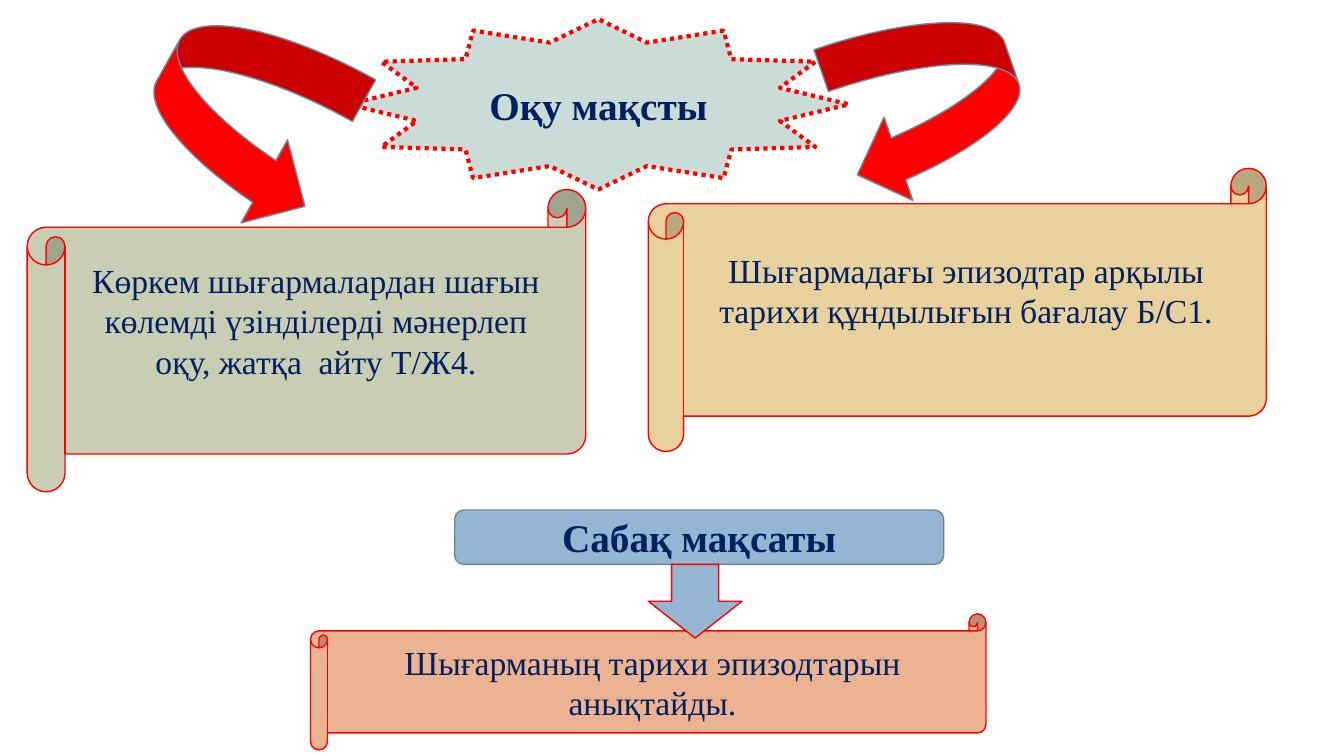
"""Build a slide that sets out reading aims and the lesson aim."""
import pptx
import pptx.util
import pptx.dml.color
import pptx.enum.dml
import pptx.enum.shapes
import pptx.enum.text

Inches = pptx.util.Inches
Pt = pptx.util.Pt
RGBColor = pptx.dml.color.RGBColor
Kind = pptx.enum.shapes.MSO_SHAPE

NAVY = RGBColor(0x00, 0x20, 0x60)
RED = RGBColor(0xFF, 0x00, 0x00)
SLATE = RGBColor(0x6D, 0x87, 0x9B)
BLUE = RGBColor(0x94, 0xB6, 0xD2)
MINT = RGBColor(0xCA, 0xDC, 0xD8)
SAGE = RGBColor(0xC9, 0xCD, 0xB3)
SAND = RGBColor(0xE8, 0xD1, 0x9D)
PEACH = RGBColor(0xEB, 0xB3, 0x91)


class Board:
    """Hold the text style and the current slide."""

    font = "Times New Roman"
    ink = NAVY

    def __init__(self, slide):
        self.slide = slide

    def shape(self, kind, box, fill, line=RED, turn=0):
        """Draw a filled preset shape with a thin outline."""
        item = self.slide.shapes.add_shape(kind, *[Inches(n) for n in box])
        item.shadow.inherit = False
        item.fill.solid()
        item.fill.fore_color.rgb = fill
        item.line.color.rgb = line
        item.line.width = Pt(1)
        item.rotation = turn
        return item

    def label(self, item, text, size, bold=False):
        """Put centred text in a shape."""
        frame = item.text_frame
        frame.word_wrap = True
        frame.vertical_anchor = pptx.enum.text.MSO_ANCHOR.MIDDLE
        para = frame.paragraphs[0]
        para.alignment = pptx.enum.text.PP_ALIGN.CENTER
        run = para.add_run()
        run.text = text
        run.font.name = self.font
        run.font.size = Pt(size)
        run.font.bold = bold
        run.font.color.rgb = self.ink

    def scroll(self, box, fill, text, foot=0.05):
        """Draw a scroll whose text is lifted by a foot margin."""
        item = self.shape(Kind.HORIZONTAL_SCROLL, box, fill)
        self.label(item, text, 24)
        item.text_frame.margin_bottom = Inches(foot)

    def head(self, kind, box, fill, line, text):
        """Draw a shape that carries a bold heading."""
        item = self.shape(kind, box, fill, line)
        self.label(item, text, 28, True)
        return item


def main():
    """Build and save the slide."""
    deck = pptx.Presentation()
    deck.slide_width = Inches(13.33)
    deck.slide_height = Inches(7.5)
    board = Board(deck.slides.add_slide(deck.slide_layouts[6]))

    board.scroll((0.27, 1.88, 5.54, 3), SAGE,
                 "Көркем шығармалардан шағын көлемді үзінділерді мәнерлеп "
                 "оқу, жатқа  айту Т/Ж4.", 0.45)
    board.scroll((6.43, 1.67, 6.13, 2.81), SAND,
                 "Шығармадағы эпизодтар арқылы тарихи құндылығын "
                 "бағалау Б/С1.", 0.45)
    star = board.head(Kind.STAR_12_POINT, (3.45, 0.19, 4.97, 1.69),
                      MINT, RED, "Оқу мақсты")
    star.line.width = Pt(3)
    star.line.dash_style = pptx.enum.dml.MSO_LINE.ROUND_DOT

    board.shape(Kind.CURVED_RIGHT_ARROW, (1.49, 0.21, 1.89, 1.91),
                RED, SLATE, 29.2)
    board.shape(Kind.CURVED_LEFT_ARROW, (8.31, 0.15, 1.81, 1.75),
                RED, SLATE, 340.9)

    board.head(Kind.ROUNDED_RECTANGLE, (4.51, 5.06, 4.85, 0.54),
               BLUE, SLATE, "Сабақ мақсаты")
    board.scroll((3.08, 6.09, 6.7, 1.35), PEACH,
                 "Шығарманың тарихи эпизодтарын анықтайды.")
    board.shape(Kind.DOWN_ARROW, (6.43, 5.6, 0.93, 0.73), BLUE)
    deck.save("out.pptx")


if __name__ == "__main__":
    main()
